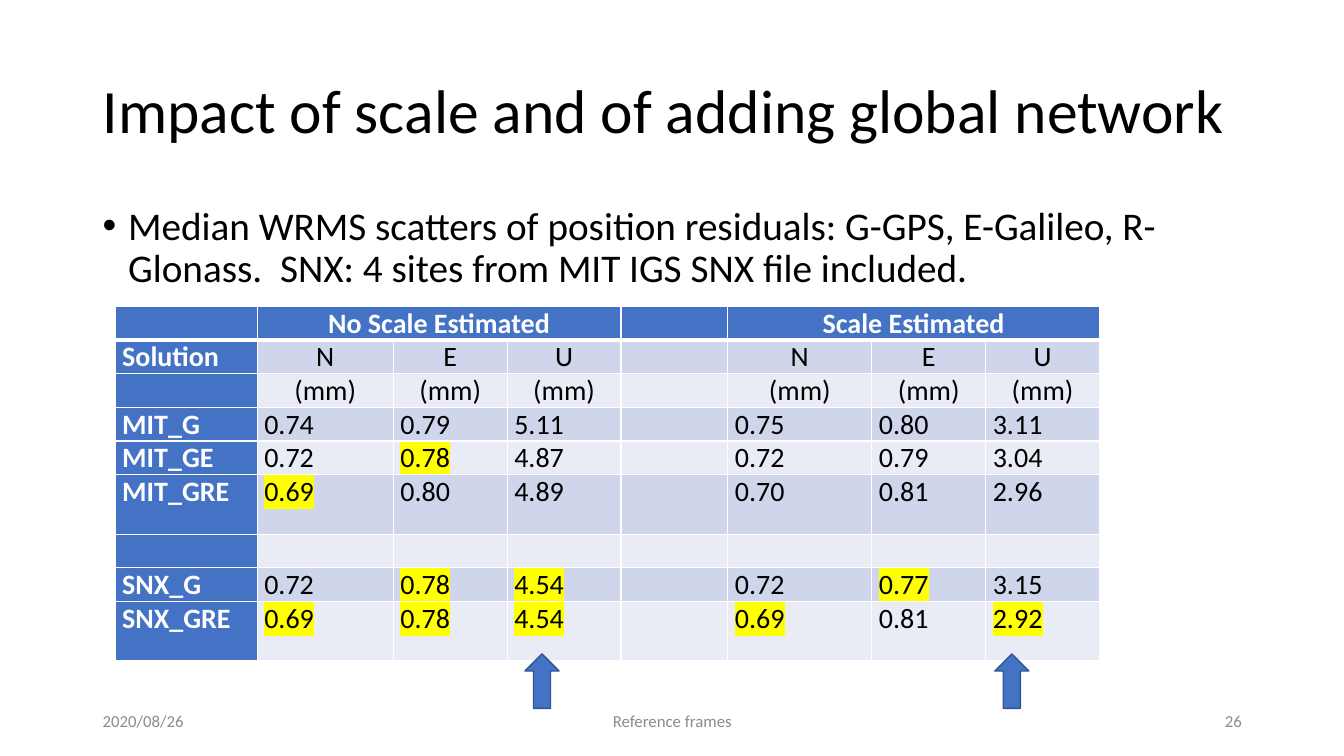
from dataclasses import dataclass

import lxml.etree
import pptx
import pptx.dml.color
import pptx.enum.shapes
import pptx.enum.text
import pptx.oxml.ns
import pptx.util

Cm = pptx.util.Cm
Pt = pptx.util.Pt
RGBColor = pptx.dml.color.RGBColor
Align = pptx.enum.text.PP_ALIGN
Anchor = pptx.enum.text.MSO_ANCHOR
qn = pptx.oxml.ns.qn

FONT = "Calibri"
BLACK = RGBColor(0x00, 0x00, 0x00)
WHITE = RGBColor(0xFF, 0xFF, 0xFF)
GREY = RGBColor(0x8C, 0x8C, 0x8C)
BLUE = RGBColor(0x44, 0x72, 0xC4)
DARK_BLUE = RGBColor(0x32, 0x54, 0x91)
DARK_BAND = RGBColor(0xCF, 0xD5, 0xEA)
LIGHT_BAND = RGBColor(0xE9, 0xEB, 0xF5)
YELLOW = RGBColor(0xFF, 0xFF, 0x00)


@dataclass
class TextItem:
    text: str
    left: float
    top: float
    width: float
    height: float
    size: int
    color: RGBColor = BLACK
    align: Align = Align.LEFT
    anchor: Anchor = Anchor.MIDDLE
    line_spacing: float = 1.0
    bullet: bool = False


@dataclass
class SolutionRow:
    cells: tuple[str, ...]
    highlighted: tuple[int, ...] = ()
    height: float = 0.76
    centered: bool = False


FOOTER = dict(top=17.65, height=1.02, size=12, color=GREY)
TEXTS = [
    TextItem("Impact of scale and of adding global network",
             2.34, 1.02, 29.21, 3.68, 44, line_spacing=0.9),
    TextItem("Median WRMS scatters of position residuals: G-GPS, E-Galileo, R-Glonass.  "
             "SNX: 4 sites from MIT IGS SNX file included.",
             2.34, 5.08, 29.21, 12.09, 28, anchor=Anchor.TOP, line_spacing=0.9, bullet=True),
    TextItem("2020/08/26", left=2.34, width=7.62, **FOOTER),
    TextItem("Reference frames", left=11.23, width=11.43, align=Align.CENTER, **FOOTER),
    TextItem("26", left=23.93, width=7.62, align=Align.RIGHT, **FOOTER),
]

TALL = 1.5
COLUMN_WIDTHS = (3.58, 3.43, 2.87, 2.87, 2.69, 3.63, 2.87, 2.87)
SOLUTION_ROWS = [
    SolutionRow(("", "No Scale Estimated", "", "", "", "Scale Estimated", "", ""), centered=True),
    SolutionRow(("Solution", "N", "E", "U", "", "N", "E", "U"), centered=True),
    SolutionRow(("", "(mm)", "(mm)", "(mm)", "", "(mm)", "(mm)", "(mm)"), centered=True),
    SolutionRow(("MIT_G", "0.74", "0.79", "5.11", "", "0.75", "0.80", "3.11")),
    SolutionRow(("MIT_GE", "0.72", "0.78", "4.87", "", "0.72", "0.79", "3.04"), (2,)),
    SolutionRow(("MIT_GRE", "0.69", "0.80", "4.89", "", "0.70", "0.81", "2.96"), (1,), TALL),
    SolutionRow(("",) * len(COLUMN_WIDTHS)),
    SolutionRow(("SNX_G", "0.72", "0.78", "4.54", "", "0.72", "0.77", "3.15"), (2, 3, 6)),
    SolutionRow(("SNX_GRE", "0.69", "0.78", "4.54", "", "0.69", "0.81", "2.92"),
                (1, 2, 3, 5, 7), TALL),
]
SCALE_GROUP_COLUMNS = (1, 5)
UP_ARROW_LEFTS = (13.23, 25.07)


def add_run(paragraph, text: str, size: int, color: RGBColor, bold: bool = False):
    run = paragraph.add_run()
    run.text = text
    run.font.name = FONT
    run.font.size = Pt(size)
    run.font.bold = bold
    run.font.color.rgb = color
    return run


def add_text(slide, item: TextItem) -> None:
    box = slide.shapes.add_textbox(Cm(item.left), Cm(item.top), Cm(item.width), Cm(item.height))
    frame = box.text_frame
    frame.word_wrap = True
    frame.vertical_anchor = item.anchor
    paragraph = frame.paragraphs[0]
    paragraph.alignment = item.align
    paragraph.line_spacing = item.line_spacing
    if item.bullet:
        paragraph.space_before = Pt(10)
        properties = paragraph._p.get_or_add_pPr()
        properties.set("marL", str(Cm(0.64)))
        properties.set("indent", str(-Cm(0.64)))
        lxml.etree.SubElement(properties, qn("a:buFont")).set("typeface", "Arial")
        lxml.etree.SubElement(properties, qn("a:buChar")).set("char", "•")
    add_run(paragraph, item.text, item.size, item.color)


def highlight(run) -> None:
    mark = lxml.etree.Element(qn("a:highlight"))
    lxml.etree.SubElement(mark, qn("a:srgbClr")).set("val", str(YELLOW))
    run._r.get_or_add_rPr().find(qn("a:solidFill")).addnext(mark)


def set_borders(cell, top: float, bottom: float) -> None:
    properties = cell._tc.get_or_add_tcPr()
    widths = {"a:lnL": 1, "a:lnR": 1, "a:lnT": top, "a:lnB": bottom}
    for position, (tag, width) in enumerate(widths.items()):
        border = lxml.etree.Element(qn(tag))
        border.set("w", str(Pt(width)))
        fill = lxml.etree.SubElement(border, qn("a:solidFill"))
        lxml.etree.SubElement(fill, qn("a:srgbClr")).set("val", str(WHITE))
        properties.insert(position, border)


def fill_cell(cell, row: SolutionRow, row_index: int, column: int) -> None:
    is_header = row_index == 0 or column == 0
    band = DARK_BAND if row_index % 2 else LIGHT_BAND
    cell.fill.solid()
    cell.fill.fore_color.rgb = BLUE if is_header else band
    cell.margin_left = cell.margin_right = Cm(0.18)
    cell.margin_top = cell.margin_bottom = 0
    # The header row is underlined by a heavier rule
    set_borders(cell, top=3 if row_index == 1 else 1, bottom=3 if row_index == 0 else 1)
    paragraph = cell.text_frame.paragraphs[0]
    paragraph.alignment = Align.CENTER if row.centered and column else Align.LEFT
    text = row.cells[column]
    if text:
        run = add_run(paragraph, text, 20, WHITE if is_header else BLACK, is_header)
        if column in row.highlighted:
            highlight(run)
    else:
        lxml.etree.SubElement(paragraph._p, qn("a:endParaRPr")).set("sz", "2000")


def add_solution_table(slide) -> None:
    frame = slide.shapes.add_table(
        len(SOLUTION_ROWS), len(COLUMN_WIDTHS), Cm(2.9), Cm(7.72),
        Cm(sum(COLUMN_WIDTHS)), Cm(sum(row.height for row in SOLUTION_ROWS)))
    table = frame.table
    table.first_row = table.horz_banding = False
    for column, width in enumerate(COLUMN_WIDTHS):
        table.columns[column].width = Cm(width)
    for row_index, row in enumerate(SOLUTION_ROWS):
        table.rows[row_index].height = Cm(row.height)
        for column in range(len(COLUMN_WIDTHS)):
            fill_cell(table.cell(row_index, column), row, row_index, column)
    for column in SCALE_GROUP_COLUMNS:
        table.cell(0, column).merge(table.cell(0, column + 2))


def add_up_arrow(slide, left: float) -> None:
    arrow = slide.shapes.add_shape(pptx.enum.shapes.MSO_SHAPE.UP_ARROW,
                                   Cm(left), Cm(16.48), Cm(0.86), Cm(1.37))
    arrow.shadow.inherit = False
    arrow.fill.solid()
    arrow.fill.fore_color.rgb = BLUE
    arrow.line.color.rgb = DARK_BLUE
    arrow.line.width = Pt(1)


def main() -> None:
    presentation = pptx.Presentation()
    presentation.slide_width = Cm(33.87)
    presentation.slide_height = Cm(19.05)
    slide = presentation.slides.add_slide(presentation.slide_layouts[6])

    # Title, bullet and footer
    for item in TEXTS:
        add_text(slide, item)

    # Scatter of each solution, without and with scale
    add_solution_table(slide)

    # Arrows under the two U columns
    for left in UP_ARROW_LEFTS:
        add_up_arrow(slide, left)

    presentation.save("out.pptx")


if __name__ == "__main__":
    main()
